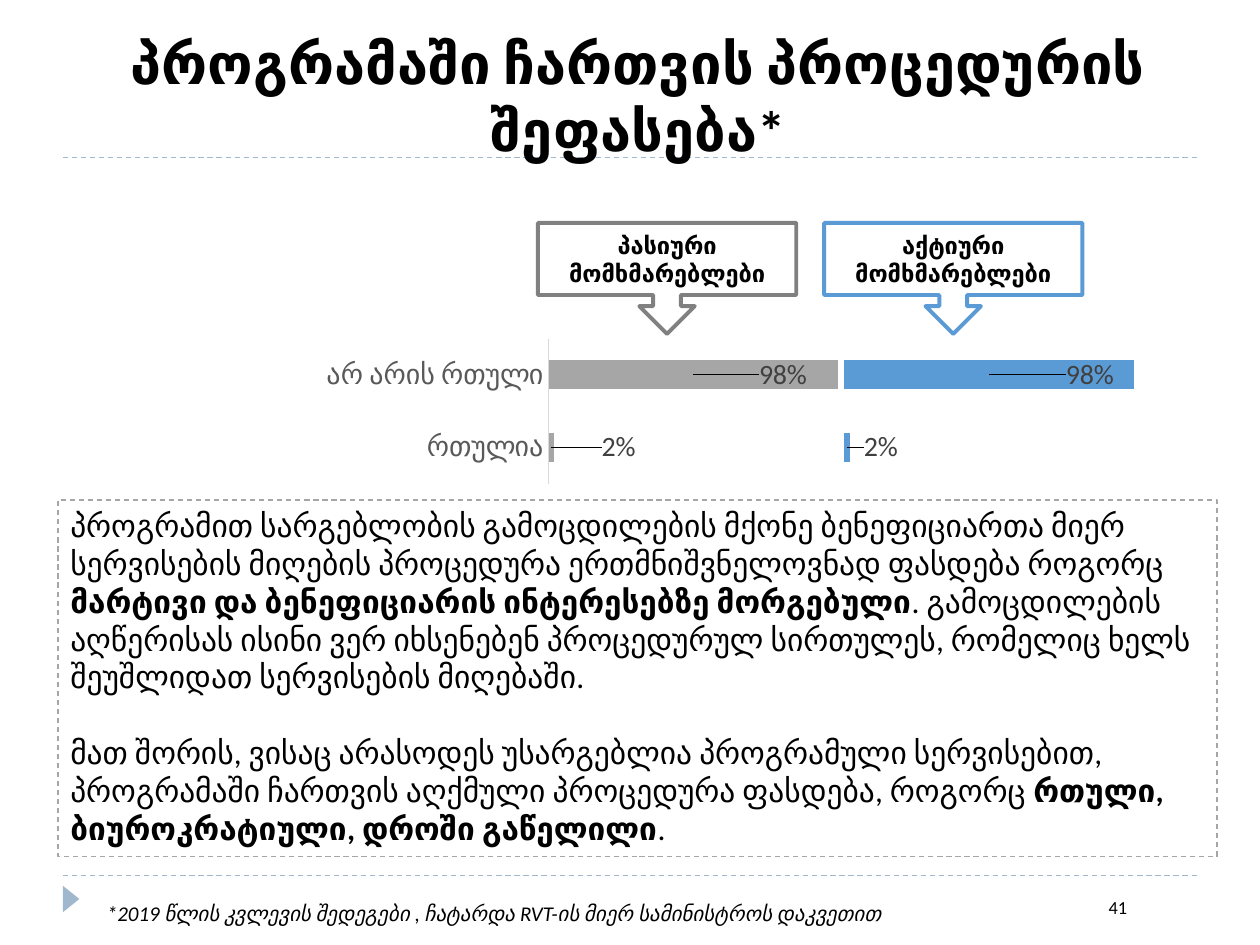
from dataclasses import dataclass

from lxml import etree
from pptx import Presentation
from pptx import util as u
from pptx.chart import data as chart_data
from pptx.dml.color import RGBColor
from pptx.enum import chart as ce, dml, shapes, text
from pptx.oxml.ns import qn


@dataclass(frozen=True)
class Theme:
    font: str = "Calibri"
    black: str = "000000"
    accent: str = "9FB8CD"
    passive: str = "808080"
    passive_bar: str = "A6A6A6"
    active: str = "5B9BD5"
    axis_text: str = "595959"
    label_text: str = "404040"
    axis_line: str = "D9D9D9"
    title: float = 32
    body: float = 18
    chart: float = 16
    callout: float = 13.5
    note: float = 12
    number: float = 10.5


def apply(target, **values):
    for name, value in values.items():
        setattr(target, name, value)


def add_layout(parent, index, **values):
    layout = etree.Element(qn("c:layout"))
    manual = etree.SubElement(layout, qn("c:manualLayout"))
    for name, value in values.items():
        etree.SubElement(manual, qn(f"c:{name}")).set("val", str(value))
    parent.insert(index, layout)


class SlideBuilder:
    def __init__(self, slide, theme):
        self.slide = slide
        self.theme = theme

    def style_font(self, font, size, color=None, **values):
        apply(font, name=self.theme.font, size=u.Pt(size), **values)
        font.color.rgb = RGBColor.from_string(color or self.theme.black)

    def style_line(self, line, color, width=0.75, dash=None):
        line.color.rgb = RGBColor.from_string(color)
        apply(line, width=u.Pt(width), dash_style=dash)

    def fill_text(self, shape, paragraphs, size, align=None, gap=0, frame=None, **values):
        text_frame = shape.text_frame
        apply(text_frame, word_wrap=True, **(frame or {}))
        for index, runs in enumerate(paragraphs):
            paragraph = text_frame.add_paragraph() if index else text_frame.paragraphs[0]
            apply(paragraph, alignment=align or text.PP_ALIGN.LEFT,
                  space_before=u.Pt(gap if index else 0))
            for content, bold in runs:
                run = paragraph.add_run()
                run.text = content
                self.style_font(run.font, size, bold=bold, **values)

    def text_box(self, box, content, size, bold=False, **values):
        shape = self.slide.shapes.add_textbox(*map(u.Pt, box))
        self.fill_text(shape, [[(content, bold)]], size, **values)

    def shape(self, kind, box, fill=None, line=None, rotation=0):
        shape = self.slide.shapes.add_shape(kind, *map(u.Pt, box))
        shape.shadow.inherit = False
        shape.rotation = rotation
        if fill:
            shape.fill.solid()
            shape.fill.fore_color.rgb = RGBColor.from_string(fill)
        else:
            shape.fill.background()
        if line:
            self.style_line(shape.line, *line)
        else:
            shape.line.fill.background()
        return shape

    def rule(self, top, left=36, right=684):
        connector = self.slide.shapes.add_connector(
            shapes.MSO_CONNECTOR.STRAIGHT, *map(u.Pt, (left, top, right, top)))
        self.style_line(connector.line, self.theme.accent, dash=dml.MSO_LINE.DASH)
        etree.SubElement(connector._element.spPr, qn("a:effectLst"))

    def callout(self, left, content, color):
        shape = self.shape(shapes.MSO_SHAPE.DOWN_ARROW_CALLOUT,
                           (left, 127.4, 147.6, 63.4), line=(color, 2.25))
        self.fill_text(shape, [[(content, True)]], self.theme.callout,
                       align=text.PP_ALIGN.CENTER,
                       frame={"vertical_anchor": text.MSO_ANCHOR.MIDDLE})

    def bar_chart(self, box, categories, series, plot_area):
        data = chart_data.CategoryChartData(number_format="###0%")
        data.categories = categories
        for index, (values, _, _) in enumerate(series, 1):
            data.add_series(f"Series {index}", values)
        chart = self.slide.shapes.add_chart(
            ce.XL_CHART_TYPE.BAR_STACKED_100, *map(u.Pt, box), data).chart
        apply(chart, has_legend=False, has_title=False)
        self.style_font(chart.font, 10)
        apply(chart.plots[0], gap_width=150, overlap=100, vary_by_categories=False)
        apply(chart.value_axis, visible=False, has_major_gridlines=False,
              minimum_scale=0, maximum_scale=1)
        axis = chart.category_axis
        apply(axis, reverse_order=True, has_major_gridlines=False,
              major_tick_mark=ce.XL_TICK_MARK.NONE, minor_tick_mark=ce.XL_TICK_MARK.NONE)
        self.style_font(axis.tick_labels.font, self.theme.chart, self.theme.axis_text)
        self.style_line(axis.format.line, self.theme.axis_line)
        for bars, (_, color, offsets) in zip(chart.plots[0].series, series):
            if color:
                bars.format.fill.solid()
                bars.format.fill.fore_color.rgb = RGBColor.from_string(color)
                self.bar_labels(bars, offsets)
            else:
                bars.format.fill.background()
        area = chart._chartSpace.chart.plotArea
        for layout in area.findall(qn("c:layout")):
            area.remove(layout)
        add_layout(area, 0, layoutTarget="inner", xMode="edge", yMode="edge", **plot_area)

    def bar_labels(self, bars, offsets):
        labels = bars.data_labels
        apply(labels, show_value=True, number_format="###0%", number_format_is_linked=False)
        self.style_font(labels.font, self.theme.chart, self.theme.label_text)
        for index in range(len(offsets)):
            self.style_font(bars.points[index].data_label.font,
                            self.theme.chart, self.theme.label_text)
        for label, offset in zip(bars._element.iter(qn("c:dLbl")), offsets):
            add_layout(label, 1, x=offset, y=0)


def main():
    theme = Theme()
    presentation = Presentation()
    apply(presentation, slide_width=u.Pt(720), slide_height=u.Pt(540))
    slide = presentation.slides.add_slide(presentation.slide_layouts[6])
    builder = SlideBuilder(slide, theme)

    for top in (500.4, 90):
        builder.rule(top)
    builder.shape(shapes.MSO_SHAPE.ISOSCELES_TRIANGLE, (33.1, 509, 15.1, 9.4),
                  fill=theme.accent, rotation=90)
    title_frame = {"vertical_anchor": text.MSO_ANCHOR.MIDDLE,
                   "margin_left": u.Pt(5), "margin_right": u.Pt(5),
                   "margin_top": u.Pt(3), "margin_bottom": u.Pt(3)}
    builder.text_box((40.3, 26, 648.7, 57.6), "პროგრამაში ჩართვის პროცედურის შეფასება*",
                     theme.title, bold=True, align=text.PP_ALIGN.CENTER, frame=title_frame)
    builder.text_box((626.4, 508.3, 77.8, 28.8), "41", theme.number)

    builder.callout(307.4, "პასიური მომხმარებლები", theme.passive)
    builder.callout(470.9, "აქტიური მომხმარებლები", theme.active)
    shares, remainder = (0.98, 0.02), (0.02, 0.98)
    builder.bar_chart(
        (13.7, 190.8, 637.9, 89.3), ("არ არის რთული", "რთულია"),
        [(shares, theme.passive_bar, (0.08, 0.06)), (remainder, None, ()),
         (shares, theme.active, (0.09, 0.03)), (remainder, None, ())],
        {"x": 0.47, "y": 0.03, "w": 0.53, "h": 0.93})

    findings = builder.shape(shapes.MSO_SHAPE.RECTANGLE, (33.1, 285.8, 662.4, 203.8),
                             line=(theme.passive_bar, 0.75, dml.MSO_LINE.DASH))
    grow = {"auto_size": text.MSO_AUTO_SIZE.SHAPE_TO_FIT_TEXT}
    builder.fill_text(findings, [
        [("პროგრამით სარგებლობის გამოცდილების მქონე ბენეფიციართა მიერ სერვისების "
          "მიღების პროცედურა ერთმნიშვნელოვნად ფასდება როგორც ", False),
         ("მარტივი და ბენეფიციარის ინტერესებზე მორგებული", True),
         (". გამოცდილების აღწერისას ისინი ვერ იხსენებენ პროცედურულ სირთულეს, "
          "რომელიც ხელს შეუშლიდათ სერვისების მიღებაში.", False)],
        [("მათ შორის, ვისაც არასოდეს უსარგებლია პროგრამული სერვისებით, პროგრამაში "
          "ჩართვის აღქმული პროცედურა ფასდება, როგორც ", False),
         ("რთული, ბიუროკრატიული, დროში გაწელილი", True), (".", False)],
    ], theme.body, gap=21.6, frame={**grow, "vertical_anchor": text.MSO_ANCHOR.TOP})
    builder.text_box((54, 511.2, 558.7, 21.6),
                     "*2019 წლის კვლევის შედეგები , ჩატარდა RVT-ის მიერ სამინისტროს დაკვეთით",
                     theme.note, italic=True, frame=grow)
    presentation.save("out.pptx")


if __name__ == "__main__":
    main()
